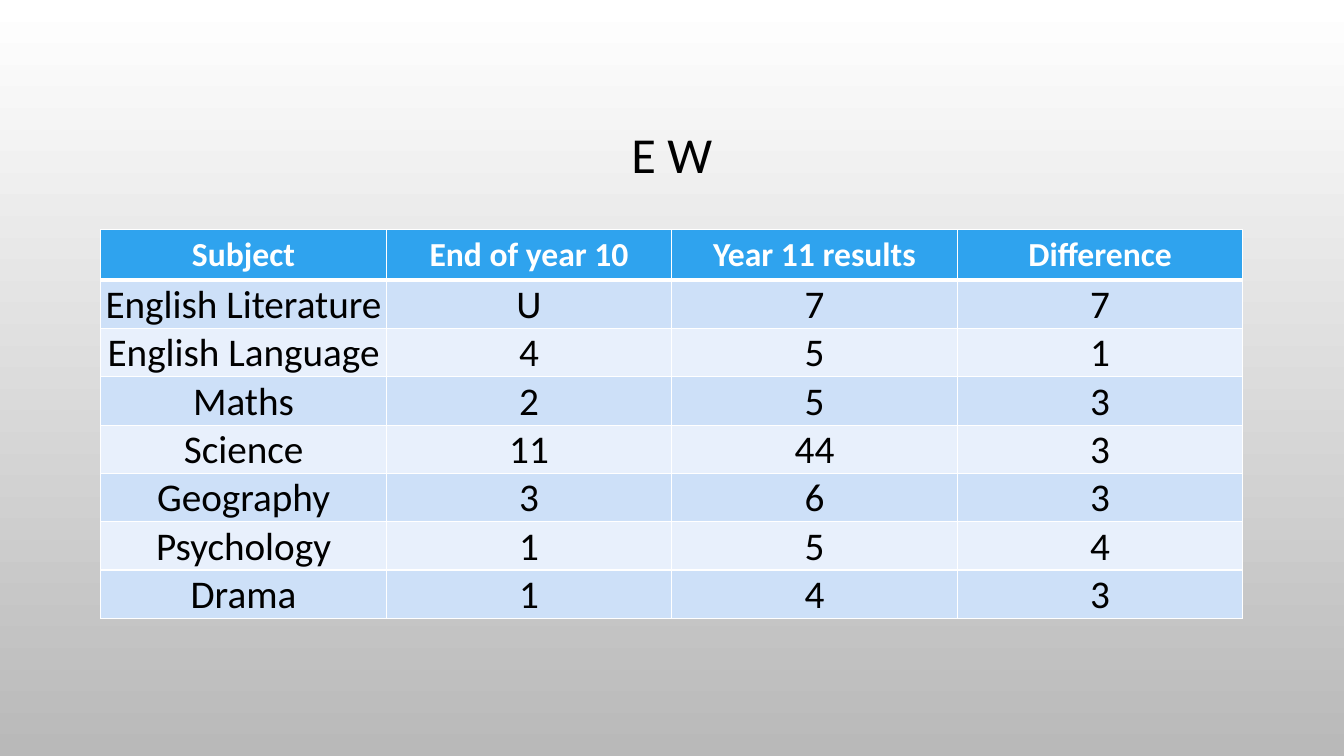
from lxml import etree
from pptx import Presentation
from pptx import util as u
from pptx.dml.color import RGBColor
from pptx.enum import text
from pptx.oxml import ns

FONT = "Calibri"
WHITE, BLACK = "FFFFFF", "000000"
HEADER_BLUE = "2FA3EE"
BAND_FILLS = ("CDE0F8", "E8F0FC")
RESULTS = [
    ("Subject", "End of year 10", "Year 11 results", "Difference"),
    ("English Literature", "U", "7", "7"),
    ("English Language", "4", "5", "1"),
    ("Maths", "2", "5", "3"),
    ("Science", "11", "44", "3"),
    ("Geography", "3", "6", "3"),
    ("Psychology", "1", "5", "4"),
    ("Drama", "1", "4", "3"),
]


def rgb(hex_colour):
    return RGBColor.from_string(hex_colour)


def write(frame, words, size, colour, bold=False):
    """Put one centred line of text in a frame."""
    frame.text = words
    line = frame.paragraphs[0]
    line.alignment = text.PP_ALIGN.CENTER
    font = line.runs[0].font
    font.name, font.size, font.bold = FONT, u.Pt(size), bold
    font.color.rgb = rgb(colour)


def draw_borders(cell, top, bottom):
    """Draw white cell borders; call before the fill, which must follow them."""
    properties = cell._tc.get_or_add_tcPr()
    for side, width in (("L", 1), ("R", 1), ("T", top), ("B", bottom)):
        border = etree.SubElement(properties, ns.qn("a:ln" + side), w=str(u.Pt(width)))
        solid = etree.SubElement(border, ns.qn("a:solidFill"))
        etree.SubElement(solid, ns.qn("a:srgbClr"), val=WHITE)


def fill_background(slide):
    fill = slide.background.fill
    fill.gradient()
    fill.gradient_angle = 270
    for stop, colour in zip(fill.gradient_stops, (WHITE, "B9B9B9")):
        stop.color.rgb = rgb(colour)


def add_title(slide, left, top, width, height):
    frame = slide.shapes.add_textbox(left, top, width, height).text_frame
    frame.word_wrap = True
    frame.vertical_anchor = text.MSO_ANCHOR.MIDDLE
    write(frame, "E W", 36, BLACK)
    frame.paragraphs[0].line_spacing = 0.9


def add_results(slide, left, top, width, row_height):
    rows, columns = len(RESULTS), len(RESULTS[0])
    table = slide.shapes.add_table(
        rows, columns, left, top, width, row_height * rows).table
    for row, values in enumerate(RESULTS):
        table.rows[row].height = row_height
        for column, value in enumerate(values):
            cell = table.cell(row, column)
            is_header = row == 0
            draw_borders(cell, top=3 if row == 1 else 1, bottom=3 if is_header else 1)
            cell.fill.solid()
            if is_header:
                cell.fill.fore_color.rgb = rgb(HEADER_BLUE)
                write(cell.text_frame, value, 24, WHITE, bold=True)
            else:
                cell.fill.fore_color.rgb = rgb(BAND_FILLS[(row - 1) % 2])
                cell.vertical_anchor = text.MSO_ANCHOR.BOTTOM
                cell.margin_left = cell.margin_right = cell.margin_top = u.Cm(0.03)
                cell.margin_bottom = 0
                write(cell.text_frame, value, 28, BLACK)


def main():
    deck = Presentation()
    deck.slide_width, deck.slide_height = u.Cm(33.87), u.Cm(19.05)
    slide = deck.slides.add_slide(deck.slide_layouts[6])
    left, width = u.Cm(2.54), u.Cm(28.78)
    fill_background(slide)
    add_title(slide, left, u.Cm(1.73), width, u.Cm(4.45))
    add_results(slide, left, u.Cm(5.79), width, u.Cm(1.04))
    deck.save("out.pptx")


if __name__ == "__main__":
    main()
